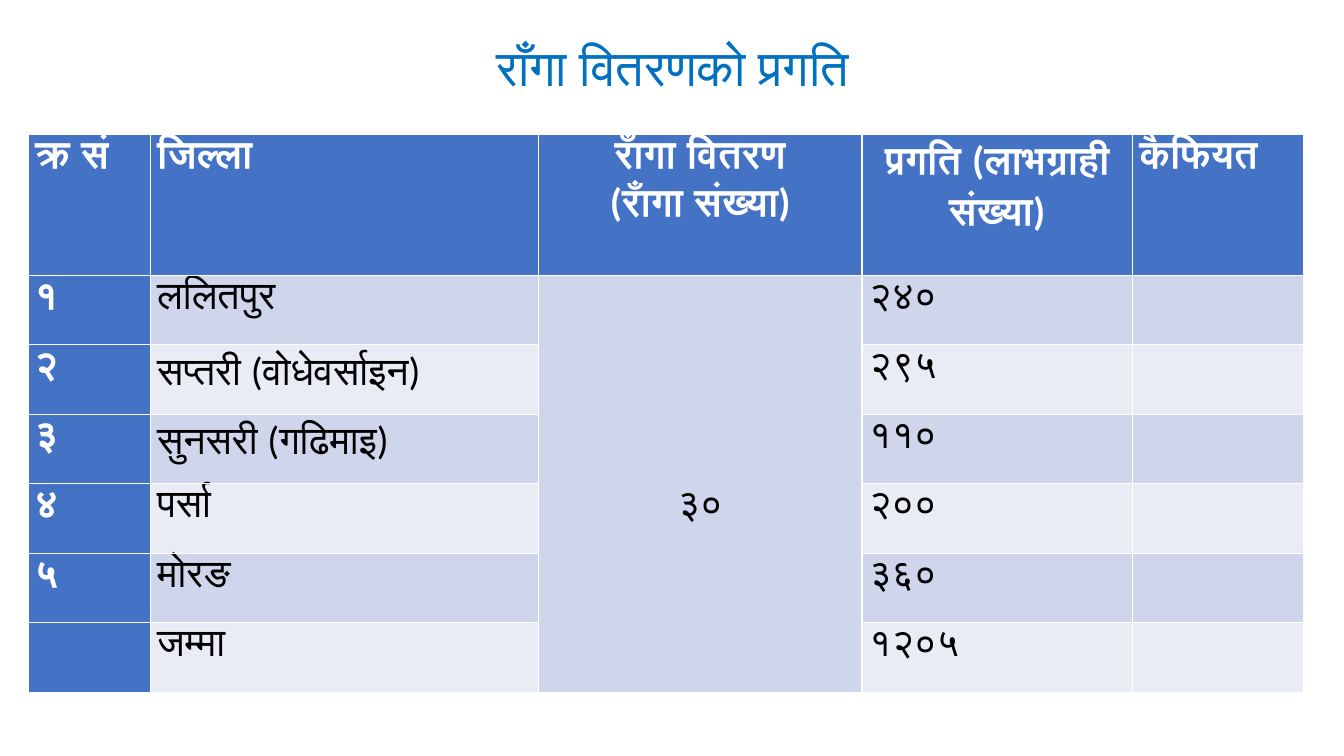
from pptx import Presentation
from pptx.dml.color import RGBColor
from pptx.enum.text import MSO_ANCHOR, PP_ALIGN
from pptx.util import Inches, Pt

CENTER, JUSTIFY = PP_ALIGN.CENTER, PP_ALIGN.JUSTIFY
TOP, MIDDLE = MSO_ANCHOR.TOP, MSO_ANCHOR.MIDDLE

TITLE_BLUE, HEADER_BLUE = "0070C0", "4472C4"
BANDS = ("CFD5EA", "E9EBF5")
WHITE, BLACK = "FFFFFF", "000000"

COLUMN_WIDTHS = (1.21, 3.85, 3.21, 2.68, 1.7)
HEADER_HEIGHT, ROW_HEIGHT = 1.4, 0.69
HEADERS = ("क्र सं", "जिल्ला", "राँगा वितरण\n(राँगा संख्या)", "प्रगति (लाभग्राही संख्या)", "कैफियत")
CENTERED_HEADERS = (2, 3)
DISTRIBUTED = "३०"
DISTRICTS = (
    ("१", "ललितपुर", "२४०"),
    ("२", "सप्तरी (वोधेवर्साइन)", "२९५"),
    ("३", "सुनसरी (गढिमाइ)", "११०"),
    ("४", "पर्सा", "२००"),
    ("५", "मोरङ", "३६०"),
    ("", "जम्मा", "१२०५"),
)


def color(value):
    return RGBColor.from_string(value)


def write_text(frame, text, *, size=28, ink=BLACK, bold=False, align=JUSTIFY, spacing=1.07):
    for index, line in enumerate(text.split("\n")):
        para = frame.add_paragraph() if index else frame.paragraphs[0]
        para.alignment = align
        para.line_spacing = spacing
        span = para.add_run()
        span.text = line
        span.font.name = "Calibri"
        span.font.size = Pt(size)
        span.font.bold = bold
        span.font.color.rgb = color(ink)


def fill_cell(cell, text, fill, *, anchor=TOP, margin_top=0, **text_format):
    cell.fill.solid()
    cell.fill.fore_color.rgb = color(fill)
    cell.margin_left = cell.margin_right = Inches(0.07)
    cell.margin_top, cell.margin_bottom = Inches(margin_top), Inches(0)
    cell.vertical_anchor = anchor
    if text:
        write_text(cell.text_frame, text, **text_format)


def add_title(page, left, top, width, height):
    title = page.shapes.title
    title.left, title.top = Inches(left), Inches(top)
    title.width, title.height = Inches(width), Inches(height)
    title.text_frame.vertical_anchor = MIDDLE
    write_text(title.text_frame, "राँगा वितरणको प्रगति", size=36, ink=TITLE_BLUE, align=CENTER, spacing=0.9)


def add_progress_table(page, left, top):
    row_count = len(DISTRICTS) + 1
    height = HEADER_HEIGHT + ROW_HEIGHT * len(DISTRICTS)
    table = page.shapes.add_table(
        row_count, len(HEADERS), Inches(left), Inches(top), Inches(sum(COLUMN_WIDTHS)), Inches(height)
    ).table
    table.first_col = True
    for column, width in zip(table.columns, COLUMN_WIDTHS):
        column.width = Inches(width)
    for index, row in enumerate(table.rows):
        row.height = Inches(ROW_HEIGHT if index else HEADER_HEIGHT)

    for index, header in enumerate(HEADERS):
        align = CENTER if index in CENTERED_HEADERS else JUSTIFY
        fill_cell(table.cell(0, index), header, HEADER_BLUE, ink=WHITE, bold=True, align=align)

    for row, (number, district, progress) in enumerate(DISTRICTS, start=1):
        band = BANDS[(row - 1) % 2]
        fill_cell(table.cell(row, 0), number, HEADER_BLUE, ink=WHITE, bold=True)
        fill_cell(table.cell(row, 1), district, band)
        fill_cell(table.cell(row, 3), progress, band)
        fill_cell(table.cell(row, 4), "", band)

    distribution = table.cell(1, 2)
    distribution.merge(table.cell(row_count - 1, 2))
    fill_cell(distribution, DISTRIBUTED, BANDS[0], anchor=MIDDLE, margin_top=0.42, align=CENTER)


def main():
    deck = Presentation()
    deck.slide_width, deck.slide_height = Inches(13.33), Inches(7.5)
    page = deck.slides.add_slide(deck.slide_layouts[5])
    add_title(page, 0.92, 0.19, 11.5, 1.01)
    add_progress_table(page, 0.28, 1.33)
    deck.save("out.pptx")


if __name__ == "__main__":
    main()
